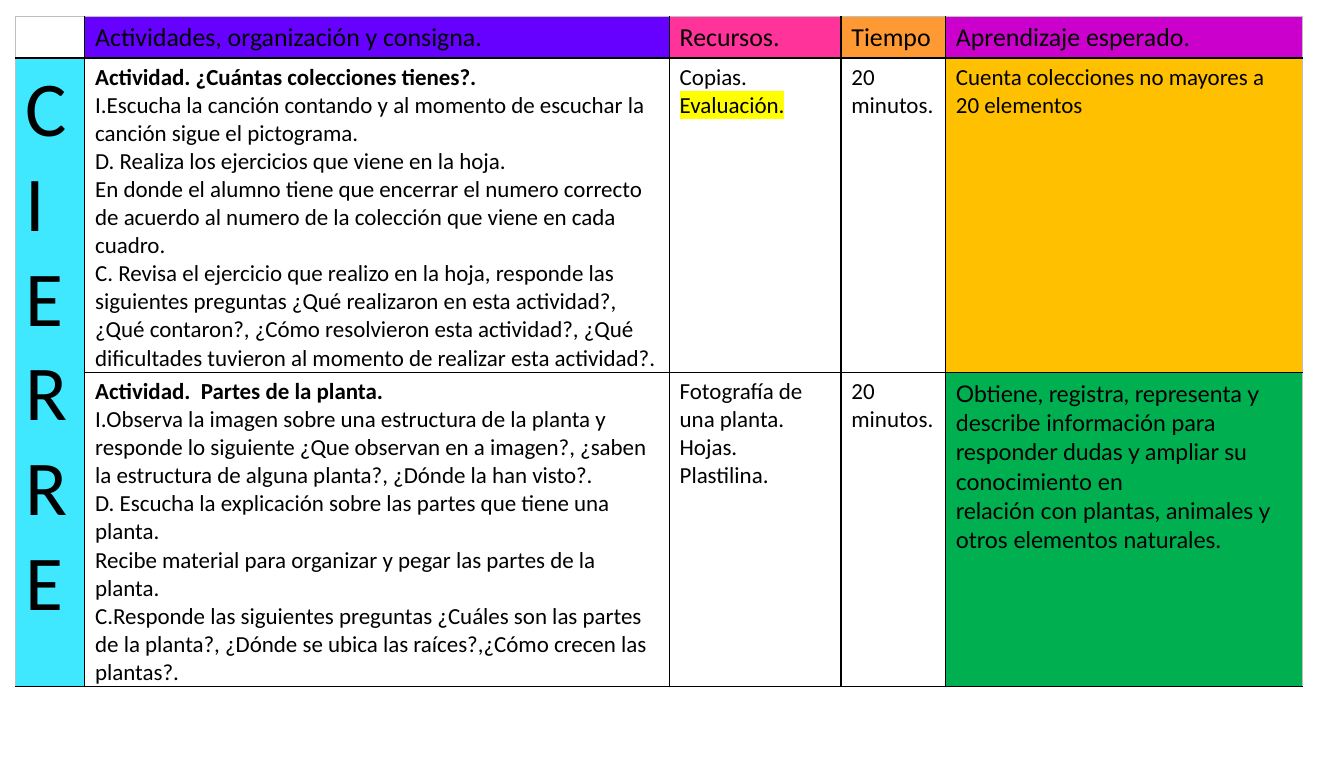
from lxml import etree
from pptx import Presentation
from pptx.dml.color import RGBColor
from pptx.oxml.ns import qn
from pptx.util import Inches, Pt

BLACK = RGBColor(0x00, 0x00, 0x00)
WHITE = RGBColor(0xFF, 0xFF, 0xFF)
GREY = RGBColor(0xBF, 0xBF, 0xBF)
VIOLET = RGBColor(0x66, 0x00, 0xFF)
PINK = RGBColor(0xFF, 0x33, 0x99)
ORANGE = RGBColor(0xFF, 0x99, 0x33)
PURPLE = RGBColor(0xCC, 0x00, 0xCC)
CYAN = RGBColor(0x3F, 0xE8, 0xFF)
GOLD = RGBColor(0xFF, 0xC0, 0x00)
GREEN = RGBColor(0x00, 0xB0, 0x50)
YELLOW = RGBColor(0xFF, 0xFF, 0x00)

COLUMN_WIDTHS = [0.67, 5.65, 1.66, 1.01, 3.45]
ROW_HEIGHTS = [0.4, 3.03, 3.03]
HEADINGS = [
    ("", WHITE),
    ("Actividades, organización y consigna.", VIOLET),
    ("Recursos.", PINK),
    ("Tiempo", ORANGE),
    ("Aprendizaje esperado.", PURPLE),
]
COLLECTIONS_ACTIVITY = [
    "Actividad. ¿Cuántas colecciones tienes?.",
    "I.Escucha la canción contando y al momento de escuchar la canción sigue el pictograma.",
    "D. Realiza los ejercicios que viene en la hoja.",
    "En donde el alumno tiene que encerrar el numero correcto de acuerdo al numero "
    "de la colección que viene en cada cuadro.",
    "C. Revisa el ejercicio que realizo en la hoja, responde las siguientes preguntas "
    "¿Qué realizaron en esta actividad?, ¿Qué contaron?, ¿Cómo resolvieron esta actividad?, "
    "¿Qué dificultades tuvieron al momento de realizar esta actividad?.",
]
PLANT_ACTIVITY = [
    "Actividad.  Partes de la planta.",
    "I.Observa la imagen sobre una estructura de la planta y responde lo siguiente "
    "¿Que observan en a imagen?, ¿saben la estructura de alguna planta?, ¿Dónde la han visto?.",
    "D. Escucha la explicación sobre las partes que tiene una planta.",
    "Recibe material para organizar y pegar las partes de la planta.",
    "C.Responde las siguientes preguntas ¿Cuáles son las partes de la planta?, "
    "¿Dónde se ubica las raíces?,¿Cómo crecen las plantas?.",
]
COLLECTIONS_RESOURCES = ["Copias.", "Evaluación."]
PLANT_RESOURCES = ["Fotografía de una planta.", "Hojas.", "Plastilina."]
DURATION = ["20 minutos."]
COLLECTIONS_LEARNING = ["Cuenta colecciones no mayores a 20 elementos"]
PLANT_LEARNING = [
    "Obtiene, registra, representa y",
    "describe información para responder dudas y ampliar su conocimiento en",
    "relación con plantas, animales y otros elementos naturales.",
]


def add_border(cell, side, color):
    line = etree.SubElement(cell._tc.get_or_add_tcPr(), qn(f"a:ln{side}"), w=str(Pt(1)))
    fill = etree.SubElement(line, qn("a:solidFill"))
    etree.SubElement(fill, qn("a:srgbClr"), val=str(color))


def format_cell(cell, row, column):
    add_border(cell, "L", GREY if column == 0 else BLACK)
    add_border(cell, "R", GREY if column == len(COLUMN_WIDTHS) - 1 else BLACK)
    add_border(cell, "T", GREY if row == 0 else BLACK)
    add_border(cell, "B", BLACK)
    cell.margin_left = cell.margin_right = Inches(0.1)
    cell.margin_top = Inches(0.05)
    cell.margin_bottom = Inches(0)
    fill_cell(cell, WHITE)


def fill_cell(cell, color):
    cell.fill.solid()
    cell.fill.fore_color.rgb = color


def write_cell(cell, lines, size=16, font="Calibri", spacing=None, bold_first=False):
    frame = cell.text_frame
    for index, line in enumerate(lines):
        paragraph = frame.add_paragraph() if index else frame.paragraphs[0]
        paragraph.line_spacing = spacing
        run = paragraph.add_run()
        run.text = line
        run.font.size = Pt(size)
        run.font.name = font
        run.font.bold = bold_first and index == 0
        run.font.color.rgb = BLACK


def highlight(run, color):
    mark = etree.Element(qn("a:highlight"))
    etree.SubElement(mark, qn("a:srgbClr"), val=str(color))
    run.font._element.find(qn("a:solidFill")).addnext(mark)


def add_plan_table(slide):
    plan = slide.shapes.add_table(
        len(ROW_HEIGHTS), len(COLUMN_WIDTHS), Inches(0.15), Inches(0.16),
        Inches(sum(COLUMN_WIDTHS)), Inches(sum(ROW_HEIGHTS)),
    ).table
    plan.first_row = False
    plan.horz_banding = False
    for column, width in zip(plan.columns, COLUMN_WIDTHS):
        column.width = Inches(width)
    for row, height in enumerate(ROW_HEIGHTS):
        plan.rows[row].height = Inches(height)
        for column in range(len(COLUMN_WIDTHS)):
            format_cell(plan.cell(row, column), row, column)
    return plan


def write_headings(plan):
    for column, (heading, color) in enumerate(HEADINGS):
        cell = plan.cell(0, column)
        fill_cell(cell, color)
        if heading:
            write_cell(cell, [heading], size=18)


def write_stage(plan):
    stage = plan.cell(1, 0)
    stage.merge(plan.cell(2, 0))
    fill_cell(stage, CYAN)
    write_cell(stage, "CIERRE", size=54)


def write_activity(plan, row, activity, resources, color):
    write_cell(plan.cell(row, 1), activity, bold_first=True)
    write_cell(plan.cell(row, 2), resources)
    write_cell(plan.cell(row, 3), DURATION)
    fill_cell(plan.cell(row, 4), color)


def main():
    presentation = Presentation()
    presentation.slide_width = Inches(12.99)
    presentation.slide_height = Inches(7.5)
    slide = presentation.slides.add_slide(presentation.slide_layouts[6])
    plan = add_plan_table(slide)
    write_headings(plan)
    write_stage(plan)
    write_activity(plan, 1, COLLECTIONS_ACTIVITY, COLLECTIONS_RESOURCES, GOLD)
    write_activity(plan, 2, PLANT_ACTIVITY, PLANT_RESOURCES, GREEN)
    write_cell(plan.cell(1, 4), COLLECTIONS_LEARNING)
    write_cell(plan.cell(2, 4), PLANT_LEARNING, font="Lato", spacing=1.07)
    evaluation = plan.cell(1, 2).text_frame.paragraphs[1].runs[0]
    highlight(evaluation, YELLOW)
    presentation.save("out.pptx")


if __name__ == "__main__":
    main()
